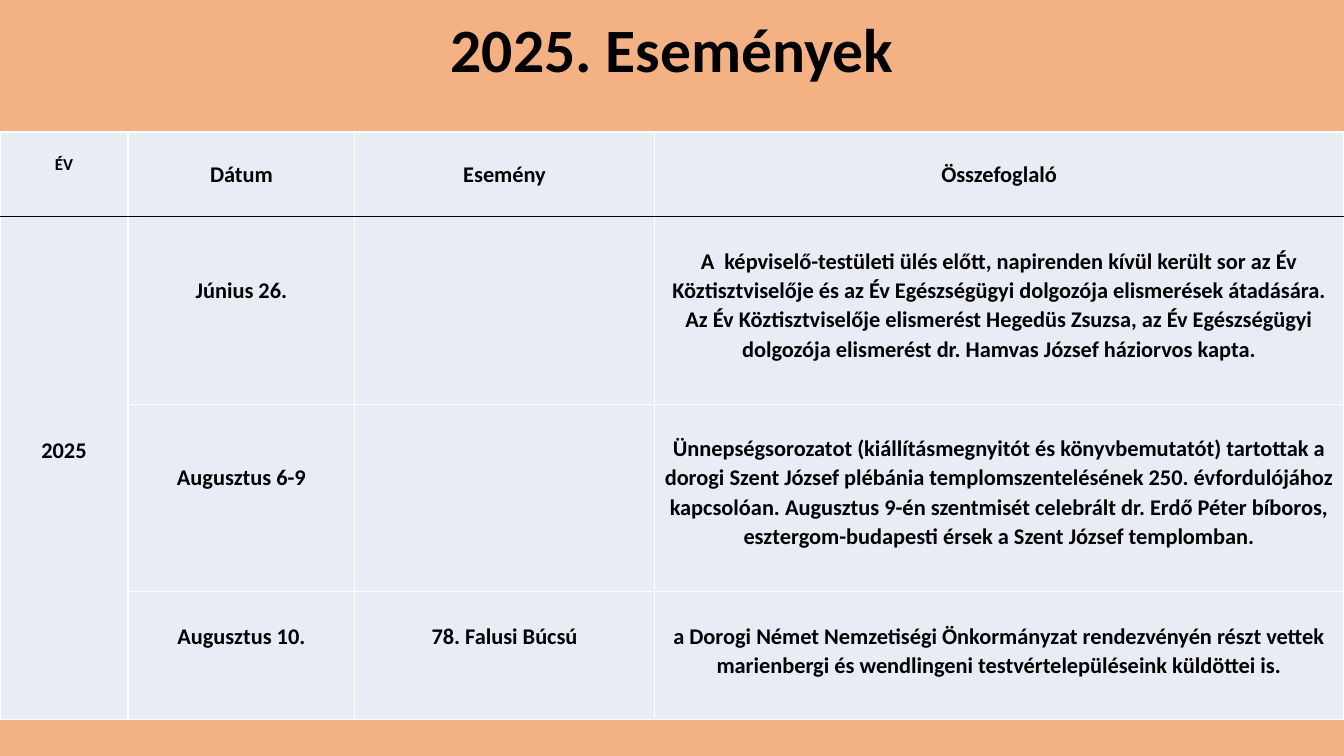
"""Builds the slide listing the events of 2025 in a table."""
from lxml import etree
from pptx import Presentation
from pptx.dml.color import RGBColor
from pptx.enum.text import MSO_ANCHOR, PP_ALIGN
from pptx.oxml.ns import qn
from pptx.util import Inches, Pt

CENTER = PP_ALIGN.CENTER
TOP, MIDDLE = MSO_ANCHOR.TOP, MSO_ANCHOR.MIDDLE
ORANGE = RGBColor(0xF4, 0xB1, 0x83)
LAVENDER = RGBColor(0xE9, 0xEB, 0xF5)
BLACK = RGBColor(0, 0, 0)
WHITE = RGBColor(0xFF, 0xFF, 0xFF)

COLUMN_WIDTHS = [1.27, 2.25, 2.97, 6.84]
ROW_HEIGHTS = [0.84, 1.86, 1.86, 1.27]
LINE = 0.29
HEADERS = ["ÉV", "Dátum", "Esemény", "Összefoglaló"]
EVENTS = [
    ("Június 26.", "",
     "A  képviselő-testületi ülés előtt, napirenden kívül került sor az Év "
     "Köztisztviselője és az Év Egészségügyi dolgozója elismerések átadására. "
     "Az Év Köztisztviselője elismerést Hegedüs Zsuzsa, az Év Egészségügyi "
     "dolgozója elismerést dr. Hamvas József háziorvos kapta."),
    ("Augusztus 6-9", "",
     "Ünnepségsorozatot (kiállításmegnyitót és könyvbemutatót) tartottak a "
     "dorogi Szent József plébánia templomszentelésének 250. évfordulójához "
     "kapcsolóan. Augusztus 9-én szentmisét celebrált dr. Erdő Péter bíboros, "
     "esztergom-budapesti érsek a Szent József templomban."),
    ("Augusztus 10.", "78. Falusi Búcsú",
     "a Dorogi Német Nemzetiségi Önkormányzat rendezvényén részt vettek "
     "marienbergi és wendlingeni testvértelepüléseink küldöttei is."),
]


def write(frame, text, size):
    paragraph = frame.paragraphs[0]
    paragraph.alignment = CENTER
    run = paragraph.add_run()
    run.text = text
    run.font.name = "Calibri"
    run.font.size = Pt(size)
    run.font.bold = True
    run.font.color.rgb = BLACK
    return paragraph


def fill_cell(cell, text, size, anchor, side, top=0, bottom=0):
    cell.vertical_anchor = anchor
    cell.margin_left = cell.margin_right = Inches(side)
    cell.margin_top, cell.margin_bottom = Inches(top), Inches(bottom)
    if text:
        paragraph = write(cell.text_frame, text, size)
        if anchor == TOP:
            paragraph.line_spacing = 1.07


prs = Presentation()
prs.slide_width, prs.slide_height = Inches(13.33), Inches(7.5)
slide = prs.slides.add_slide(prs.slide_layouts[5])
slide.background.fill.solid()
slide.background.fill.fore_color.rgb = ORANGE

title = slide.shapes.title
title.left, title.top = Inches(0.92), Inches(-0.2)
title.width, title.height = Inches(11.5), Inches(1.45)
title.text_frame.vertical_anchor = MIDDLE
write(title.text_frame, "2025. Események", 44).line_spacing = 0.9

events_table = slide.shapes.add_table(
    len(ROW_HEIGHTS), len(COLUMN_WIDTHS), Inches(0), Inches(1.31),
    Inches(sum(COLUMN_WIDTHS)), Inches(sum(ROW_HEIGHTS))).table
events_table.horz_banding = False
for column, width in zip(events_table.columns, COLUMN_WIDTHS):
    column.width = Inches(width)
for row, height in zip(events_table.rows, ROW_HEIGHTS):
    row.height = Inches(height)

for row_index, row in enumerate(events_table.rows):
    for cell in row.cells:
        cell.fill.solid()
        cell.fill.fore_color.rgb = LAVENDER
        edges = {
            "a:lnL": WHITE,
            "a:lnR": WHITE,
            "a:lnT": BLACK if row_index == 1 else WHITE,
            "a:lnB": BLACK if row_index == 0 else WHITE,
        }
        properties = cell._tc.get_or_add_tcPr()
        for position, (edge, color) in enumerate(edges.items()):
            border = etree.Element(qn(edge), w=str(Pt(1)))
            border_fill = etree.SubElement(border, qn("a:solidFill"))
            etree.SubElement(border_fill, qn("a:srgbClr"), val=str(color))
            properties.insert(position, border)

for column_index, header in enumerate(HEADERS):
    is_year = column_index == 0
    fill_cell(events_table.cell(0, column_index), header, 12 if is_year else 16,
              MIDDLE, 0.04, bottom=0.2 if is_year else 0)

year_cell = events_table.cell(1, 0)
year_cell.merge(events_table.cell(len(EVENTS), 0))
fill_cell(year_cell, "2025", 16, MIDDLE, 0.1, bottom=0.34)

for row_index, (date, event, summary) in enumerate(EVENTS, start=1):
    date_drop = LINE if event else 2 * LINE
    for column_index, (text, drop) in enumerate(
            [(date, date_drop), (event, LINE), (summary, LINE)], start=1):
        fill_cell(events_table.cell(row_index, column_index), text, 16,
                  TOP, 0.07, top=drop)

prs.save("out.pptx")
